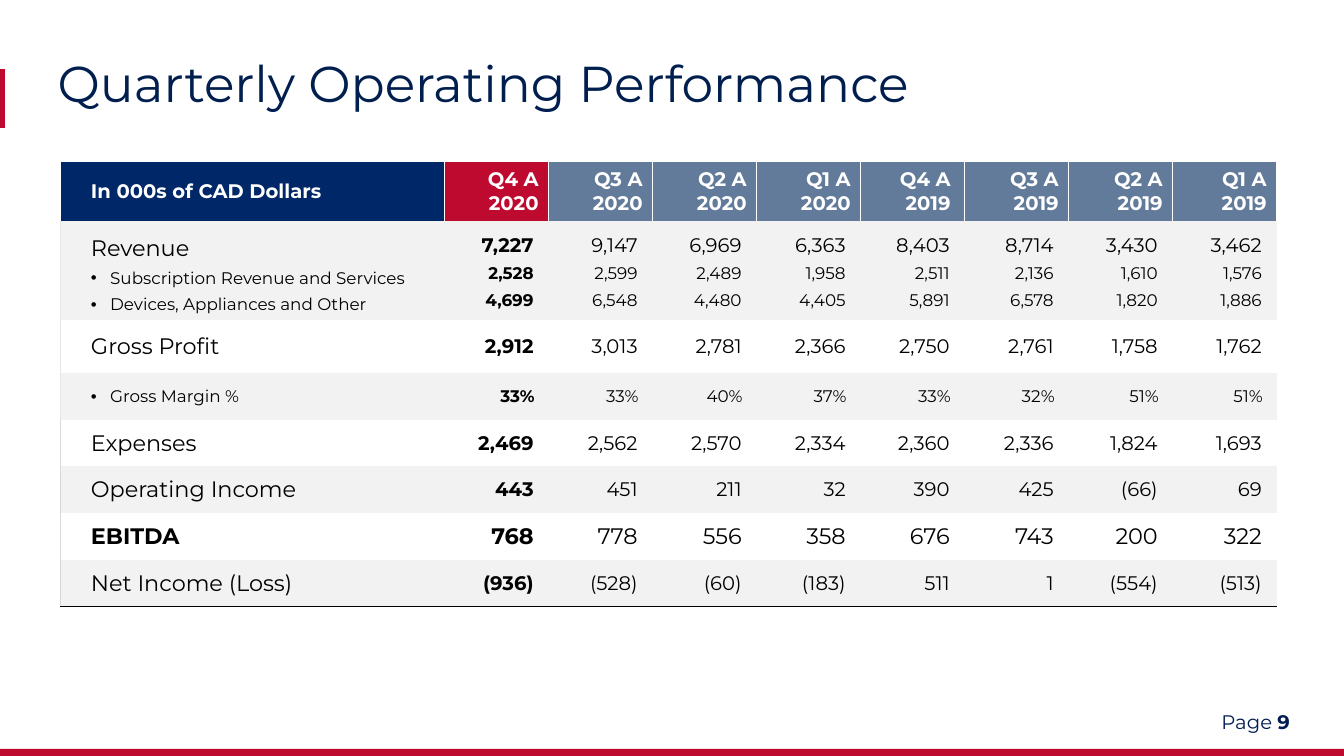
from dataclasses import dataclass
from typing import Optional

from lxml import etree
from pptx import Presentation
from pptx.dml.color import RGBColor
from pptx.enum.shapes import MSO_CONNECTOR, MSO_SHAPE
from pptx.enum.text import MSO_ANCHOR as Anchor, MSO_AUTO_SIZE as AutoSize, PP_ALIGN as Align
from pptx.oxml.ns import qn
from pptx.slide import Slide
from pptx.table import Table, _Cell as Cell
from pptx.text.text import _Paragraph as Paragraph
from pptx.util import Pt

FONT = "Montserrat"
RED, NAVY, STEEL = "BF0A30", "002868", "627B9A"
WHITE, BLACK, BAND = "FFFFFF", "000000", "F2F2F2"
LABEL_WIDTH, QUARTER_WIDTH, HEADER_HEIGHT = 274.3, 74.3, 42
BULLET_INDENT = 13.7
NO_STYLE_ID = "{2D5ABB26-0587-4C30-8999-92F81FD0307C}"


@dataclass
class Border:
    side: str
    color: str
    width: float = 1


@dataclass
class Line:
    label: str
    values: str
    label_size: float = 16
    value_size: float = 14
    bullet: bool = False
    bold: bool = False


@dataclass
class Row:
    height: float
    lines: list[Line]
    edge: Border
    value_margin: float = 10.8


BOLD_EDGE = Border("L", "E7E6E6")
FINE_EDGE = Border("L", "D9D9D9", 0.5)
QUARTERS = ["Q4 A\n2020", "Q3 A\n2020", "Q2 A\n2020", "Q1 A\n2020",
            "Q4 A\n2019", "Q3 A\n2019", "Q2 A\n2019", "Q1 A\n2019"]
ROWS = [
    Row(70.8, [
        Line("Revenue", "7,227 9,147 6,969 6,363 8,403 8,714 3,430 3,462"),
        Line("Subscription Revenue and Services",
             "2,528 2,599 2,489 1,958 2,511 2,136 1,610 1,576", 12, 12, bullet=True),
        Line("Devices, Appliances and Other",
             "4,699 6,548 4,480 4,405 5,891 6,578 1,820 1,886", 12, 12, bullet=True),
    ], BOLD_EDGE),
    Row(38, [Line("Gross Profit", "2,912 3,013 2,781 2,366 2,750 2,761 1,758 1,762")], BOLD_EDGE),
    Row(33.3, [Line("Gross Margin %", "33% 33% 40% 37% 33% 32% 51% 51%", 12, 12, bullet=True)],
        BOLD_EDGE, 10.1),
    Row(33.3, [Line("Expenses", "2,469 2,562 2,570 2,334 2,360 2,336 1,824 1,693")], FINE_EDGE),
    Row(33.3, [Line("Operating Income", "443 451 211 32 390 425 (66) 69")], FINE_EDGE),
    Row(33.3, [Line("EBITDA", "768 778 556 358 676 743 200 322", 16, 16, bold=True)], FINE_EDGE),
    Row(33.3, [Line("Net Income (Loss)", "(936) (528) (60) (183) 511 1 (554) (513)")], FINE_EDGE),
]


def rgb(color: str) -> RGBColor:
    return RGBColor.from_string(color)


def style_runs(para: Paragraph, size: float, color: str, bold: bool = False) -> None:
    for span in para.runs:
        span.font.name = FONT
        span.font.size = Pt(size)
        span.font.bold = bold
        span.font.color.rgb = rgb(color)


def add_bullet(para: Paragraph) -> None:
    properties = para._p.get_or_add_pPr()
    properties.set("marL", str(Pt(BULLET_INDENT)))
    properties.set("indent", str(-Pt(BULLET_INDENT)))
    etree.SubElement(properties, qn("a:buFont")).set("typeface", "Arial")
    etree.SubElement(properties, qn("a:buChar")).set("char", "•")


def format_cell(cell: Cell, text: str, fill: Optional[str], borders: list[Border],
                left: float = 7.2, right: float = 7.2) -> None:
    """Set text, margins, fill and borders; borders come in the order L, R, B."""
    cell.text_frame.text = text
    cell.vertical_anchor = Anchor.MIDDLE
    cell.margin_left, cell.margin_right = Pt(left), Pt(right)
    cell.margin_top = cell.margin_bottom = Pt(3.6)
    if fill:
        cell.fill.solid()
        cell.fill.fore_color.rgb = rgb(fill)
    else:
        cell.fill.background()
    properties = cell._tc.get_or_add_tcPr()
    for index, border in enumerate(borders):
        line = etree.Element(qn(f"a:ln{border.side}"), w=str(Pt(border.width)))
        solid = etree.SubElement(line, qn("a:solidFill"))
        etree.SubElement(solid, qn("a:srgbClr")).set("val", border.color)
        properties.insert(index, line)


def fill_header(table: Table) -> None:
    left_rule, right_rule = Border("L", WHITE), Border("R", WHITE)
    corner = table.cell(0, 0)
    format_cell(corner, "In 000s of CAD Dollars", NAVY, [right_rule], left=21.6)
    style_runs(corner.text_frame.paragraphs[0], 14, WHITE, True)
    for column, quarter in enumerate(QUARTERS, 1):
        cell = table.cell(0, column)
        margin = 10.1 if quarter == "Q4 A\n2019" else 7.2
        format_cell(cell, quarter, RED if column == 1 else STEEL,
                    [left_rule, right_rule], margin, margin)
        for para in cell.text_frame.paragraphs:
            para.alignment = Align.RIGHT
            style_runs(para, 14, WHITE, True)


def fill_row(table: Table, index: int, row: Row) -> None:
    fill = BAND if index % 2 else None
    base = [Border("B", BLACK)] if index == len(ROWS) else []
    spacing = 1.3 if len(row.lines) > 1 else 1.0

    label_cell = table.cell(index, 0)
    format_cell(label_cell, "\n".join(line.label for line in row.lines),
                fill, [row.edge, *base], left=21.6)
    for para, line in zip(label_cell.text_frame.paragraphs, row.lines):
        if line.bullet:
            add_bullet(para)
        para.line_spacing = spacing
        style_runs(para, line.label_size, BLACK, line.bold)

    quarters = zip(*(line.values.split() for line in row.lines))
    for column, values in enumerate(quarters, 1):
        cell = table.cell(index, column)
        format_cell(cell, "\n".join(values), fill, base, row.value_margin, row.value_margin)
        if len(row.lines) > 1:
            cell.vertical_anchor = Anchor.TOP
        for para, line in zip(cell.text_frame.paragraphs, row.lines):
            para.alignment = Align.RIGHT
            para.line_spacing = spacing
            style_runs(para, line.value_size, BLACK, column == 1)


def add_performance_table(page: Slide) -> None:
    heights = [HEADER_HEIGHT] + [row.height for row in ROWS]
    widths = [LABEL_WIDTH] + [QUARTER_WIDTH] * len(QUARTERS)
    frame = page.shapes.add_table(len(heights), len(widths), Pt(43.4), Pt(115.9),
                                  Pt(sum(widths)), Pt(sum(heights)))
    table = frame.table
    table.first_row = table.horz_banding = False
    table._tbl.tblPr.find(qn("a:tableStyleId")).text = NO_STYLE_ID
    for column, width in zip(table.columns, widths):
        column.width = Pt(width)
    for table_row, height in zip(table.rows, heights):
        table_row.height = Pt(height)
    fill_header(table)
    for index, row in enumerate(ROWS, 1):
        fill_row(table, index, row)


def add_accents(page: Slide) -> None:
    footer = page.shapes.add_shape(MSO_SHAPE.RECTANGLE, Pt(0), Pt(535), Pt(960), Pt(5))
    footer.shadow.inherit = False
    footer.fill.solid()
    footer.fill.fore_color.rgb = rgb(RED)
    footer.line.fill.background()
    marker = page.shapes.add_connector(MSO_CONNECTOR.STRAIGHT, Pt(1.5), Pt(91.5), Pt(1.5), Pt(49))
    marker.line.color.rgb = rgb(RED)
    marker.line.width = Pt(4)
    etree.SubElement(marker._element.spPr, qn("a:effectLst"))


def set_title(page: Slide) -> None:
    title = page.shapes.title
    title.left, title.top, title.width, title.height = Pt(34), Pt(38), Pt(893), Pt(47)
    frame = title.text_frame
    frame.text = "Quarterly Operating Performance"
    frame.auto_size = AutoSize.SHAPE_TO_FIT_TEXT
    frame.vertical_anchor = Anchor.MIDDLE
    para = frame.paragraphs[0]
    para.alignment = Align.LEFT
    para.line_spacing = 0.9
    style_runs(para, 36, "001E4E")


def add_page_number(page: Slide) -> None:
    box = page.shapes.add_textbox(Pt(865.4), Pt(494.6), Pt(94), Pt(41.8))
    box.text_frame.word_wrap = True
    box.text_frame.vertical_anchor = Anchor.MIDDLE
    para = box.text_frame.paragraphs[0]
    para.text = "Page "
    number = para.add_run()
    number.text = "9"
    style_runs(para, 14, "021B52")
    number.font.bold = True


def main() -> None:
    deck = Presentation()
    deck.slide_width, deck.slide_height = Pt(960), Pt(540)
    page = deck.slides.add_slide(deck.slide_layouts[5])
    add_accents(page)
    set_title(page)
    add_page_number(page)
    add_performance_table(page)
    deck.save("out.pptx")


if __name__ == "__main__":
    main()
